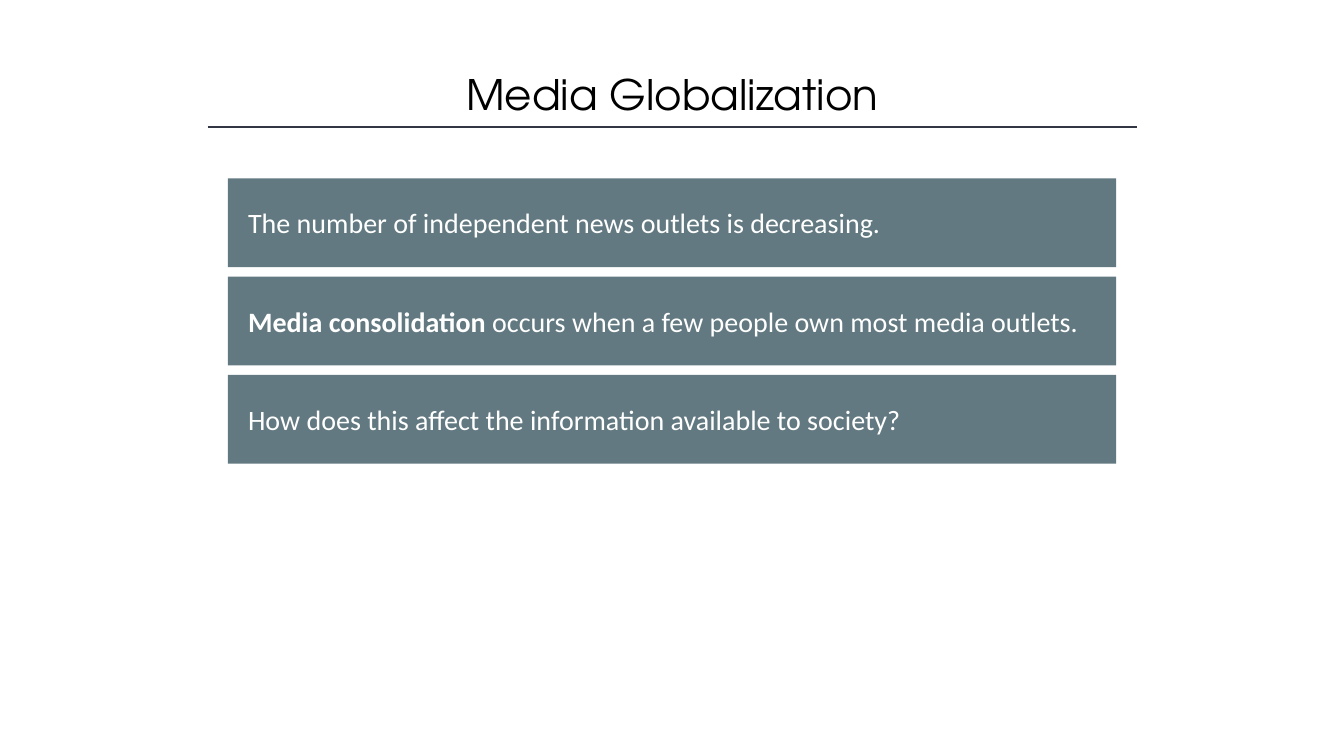
from lxml import etree
from pptx import Presentation
from pptx.dml.color import RGBColor
from pptx.enum import shapes, text
from pptx.oxml import ns
from pptx.util import Inches, Pt

TITLE = "Media Globalization"
POINTS = [
    [("The number of independent news outlets is decreasing.", False)],
    [("Media consolidation ", True),
     ("occurs when a few people own most media outlets.", False)],
    [("How does this affect the information available to society?", False)],
]
BAR_LEFT, BAR_TOP, BAR_WIDTH, BAR_HEIGHT = 2.26, 1.77, 8.81, 0.88
BAR_STEP = 0.975


def color(value):
    return RGBColor.from_string(value)


def set_font(font, name, size, value):
    font.name = name
    font.size = Pt(size)
    font.color.rgb = color(value)


def add_title(page):
    box = page.shapes.add_textbox(Inches(1.67), Inches(0.63), Inches(10), Inches(0.61))
    box.text_frame.word_wrap = True
    para = box.text_frame.paragraphs[0]
    para.text = TITLE
    para.alignment = text.PP_ALIGN.CENTER
    set_font(para.font, "TeX Gyre Adventor", 30, "000000")


def add_rule(page):
    rule = page.shapes.add_connector(
        shapes.MSO_CONNECTOR.STRAIGHT,
        Inches(2.06), Inches(1.26), Inches(11.28), Inches(1.26))
    rule.line.color.rgb = color("323542")
    rule.line.width = Pt(1)
    etree.SubElement(rule._element.spPr, ns.qn("a:effectLst"))


def add_bar(page, top, spans):
    bar = page.shapes.add_shape(
        shapes.MSO_SHAPE.RECTANGLE,
        Inches(BAR_LEFT), Inches(top), Inches(BAR_WIDTH), Inches(BAR_HEIGHT))
    bar.shadow.inherit = False
    bar.fill.solid()
    bar.fill.fore_color.rgb = color("627981")
    bar.line.fill.background()
    frame = bar.text_frame
    frame.word_wrap = True
    frame.margin_left = frame.margin_right = Inches(0.2)
    frame.vertical_anchor = text.MSO_ANCHOR.MIDDLE
    para = frame.paragraphs[0]
    para.alignment = text.PP_ALIGN.LEFT
    for words, bold in spans:
        span = para.add_run()
        span.text = words
        span.font.bold = bold
    set_font(para.font, "Calibri", 20, "FFFFFF")


def main():
    deck = Presentation()
    deck.slide_width = Inches(13.33)
    deck.slide_height = Inches(7.5)
    page = deck.slides.add_slide(deck.slide_layouts[6])
    add_title(page)
    add_rule(page)
    for index, spans in enumerate(POINTS):
        add_bar(page, BAR_TOP + index * BAR_STEP, spans)
    deck.save("out.pptx")


if __name__ == "__main__":
    main()
